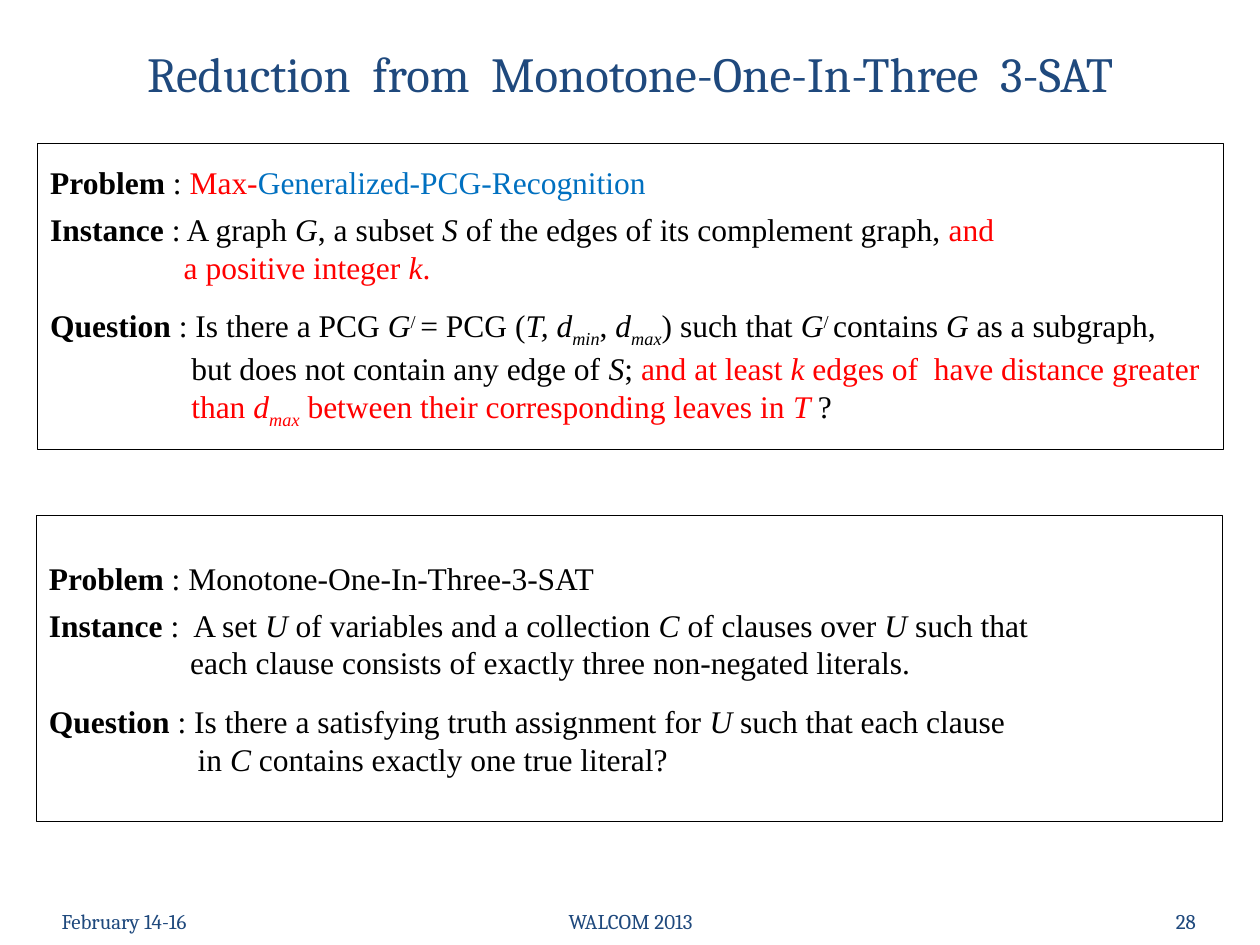
import pptx
import pptx.dml.color
import pptx.enum.shapes
import pptx.enum.text
import pptx.util

Inches, Pt = pptx.util.Inches, pptx.util.Pt
RGBColor = pptx.dml.color.RGBColor
ALIGN = pptx.enum.text.PP_ALIGN
MIDDLE = pptx.enum.text.MSO_ANCHOR.MIDDLE

BLACK = RGBColor(0, 0, 0)
RED = RGBColor(0xFF, 0, 0)
BLUE = RGBColor(0, 0x70, 0xC0)
NAVY = RGBColor(0x1F, 0x49, 0x7D)

TITLE = "Reduction  from  Monotone-One-In-Three  3-SAT"
FOOTERS = [
    ("February 14-16", 0.39, 2.33, ALIGN.LEFT),
    ("WALCOM 2013", 3.42, 3.17, ALIGN.CENTER),
    ("28", 7.26, 2.33, ALIGN.RIGHT),
]

PLAIN, BOLD, ITALIC = {}, {"bold": True}, {"italic": True}
SUPER, SUB = {"baseline": 30}, {"italic": True, "baseline": -25}
RED_TEXT, BLUE_TEXT = {"color": RED}, {"color": BLUE}
RED_ITALIC, RED_SUB = ITALIC | RED_TEXT, SUB | RED_TEXT

BOXES = [
    (0.3, 1.14, [
        (0, 0, [("Problem ", BOLD), (": ", PLAIN), ("Max-", RED_TEXT),
                ("Generalized-PCG-Recognition", BLUE_TEXT)]),
        (0, 5, [("Instance", BOLD), (" : A graph ", PLAIN), ("G", ITALIC),
                (", a subset ", PLAIN), ("S", ITALIC),
                (" of the edges of its complement graph, ", PLAIN), ("and", RED_TEXT)]),
        (1.06, 0, [("a positive integer ", RED_TEXT), ("k", RED_ITALIC), (".", RED_TEXT)]),
        (0, 12, [("Question", BOLD), (" : Is there a PCG ", PLAIN), ("G", ITALIC),
                 ("/ ", SUPER), ("= PCG (", PLAIN), ("T, d", ITALIC), ("min", SUB),
                 (", ", PLAIN), ("d", ITALIC), ("max", SUB), (") such that ", PLAIN),
                 ("G", ITALIC), ("/ ", SUPER), ("contains ", PLAIN), ("G ", ITALIC),
                 ("as a subgraph,", PLAIN)]),
        (1.12, 0, [("but does not contain any edge of ", PLAIN), ("S", ITALIC),
                   ("; ", PLAIN), ("and at least ", RED_TEXT), ("k", RED_ITALIC),
                   (" edges of  have distance greater", RED_TEXT)]),
        (1.12, 0, [("than ", RED_TEXT), ("d", RED_ITALIC), ("max", RED_SUB),
                   (" between their corresponding leaves in ", RED_TEXT),
                   ("T ", RED_ITALIC), ("?", PLAIN)]),
    ]),
    (0.29, 4.09, [
        (0, 0, [("Problem ", BOLD), (": Monotone-One-In-Three-3-SAT", PLAIN)]),
        (0, 5, [("Instance", BOLD), (" :  A set ", PLAIN), ("U", ITALIC),
                (" of variables and a collection ", PLAIN), ("C", ITALIC),
                (" of clauses over ", PLAIN), ("U", ITALIC), (" such that", PLAIN)]),
        (1.12, 0, [("each clause consists of exactly three non-negated literals.", PLAIN)]),
        (0, 12, [("Question", BOLD), (" : Is there a satisfying truth assignment for ", PLAIN),
                 ("U", ITALIC), (" such that each clause", PLAIN)]),
        (1.18, 0, [("in ", PLAIN), ("C", ITALIC),
                   (" contains exactly one true literal?", PLAIN)]),
    ]),
]


def set_values(target, values):
    for name, value in values.items():
        setattr(target, name, value)


def place(sp, left, top, width, height):
    set_values(sp, {"left": Inches(left), "top": Inches(top),
                    "width": Inches(width), "height": Inches(height)})
    set_values(sp.text_frame, {"word_wrap": True, "vertical_anchor": MIDDLE})


def add_run(p, text, font, size, color=BLACK, bold=False, italic=False, baseline=0):
    r = p.add_run()
    r.text = text
    set_values(r.font, {"name": font, "size": Pt(size), "bold": bold, "italic": italic})
    r.font.color.rgb = color
    if baseline:
        r.font._element.set("baseline", str(baseline * 1000))


def add_line(sp, text, size, align):
    p = sp.text_frame.paragraphs[0]
    p.alignment = align
    add_run(p, text, "Cambria", size, NAVY)


def add_box(slide, left, top, lines):
    sp = slide.shapes.add_shape(pptx.enum.shapes.MSO_SHAPE.RECTANGLE, 0, 0, 0, 0)
    place(sp, left, top, 9.41, 2.43)
    sp.shadow.inherit = False
    sp.fill.background()
    sp.line.color.rgb = BLACK
    sp.line.width = Pt(0.5)
    tf = sp.text_frame
    for i, (indent, gap, runs) in enumerate(lines):
        p = tf.add_paragraph() if i else tf.paragraphs[0]
        set_values(p, {"alignment": ALIGN.LEFT, "space_before": Pt(gap)})
        p._p.get_or_add_pPr().set("marL", str(Inches(indent)))
        for text, style in runs:
            add_run(p, text, "Times New Roman", 18, **style)


def main():
    prs = pptx.Presentation()
    set_values(prs, {"slide_width": Inches(10), "slide_height": Inches(7.5)})
    slide = prs.slides.add_slide(prs.slide_layouts[5])
    title = slide.shapes.title
    place(title, 0, 0, 10, 1.15)
    add_line(title, TITLE, 28, ALIGN.CENTER)
    for text, left, width, align in FOOTERS:
        sp = slide.shapes.add_textbox(0, 0, 0, 0)
        place(sp, left, 7.11, width, 0.4)
        add_line(sp, text, 12, align)
    for box in BOXES:
        add_box(slide, *box)
    prs.save("out.pptx")


if __name__ == "__main__":
    main()
